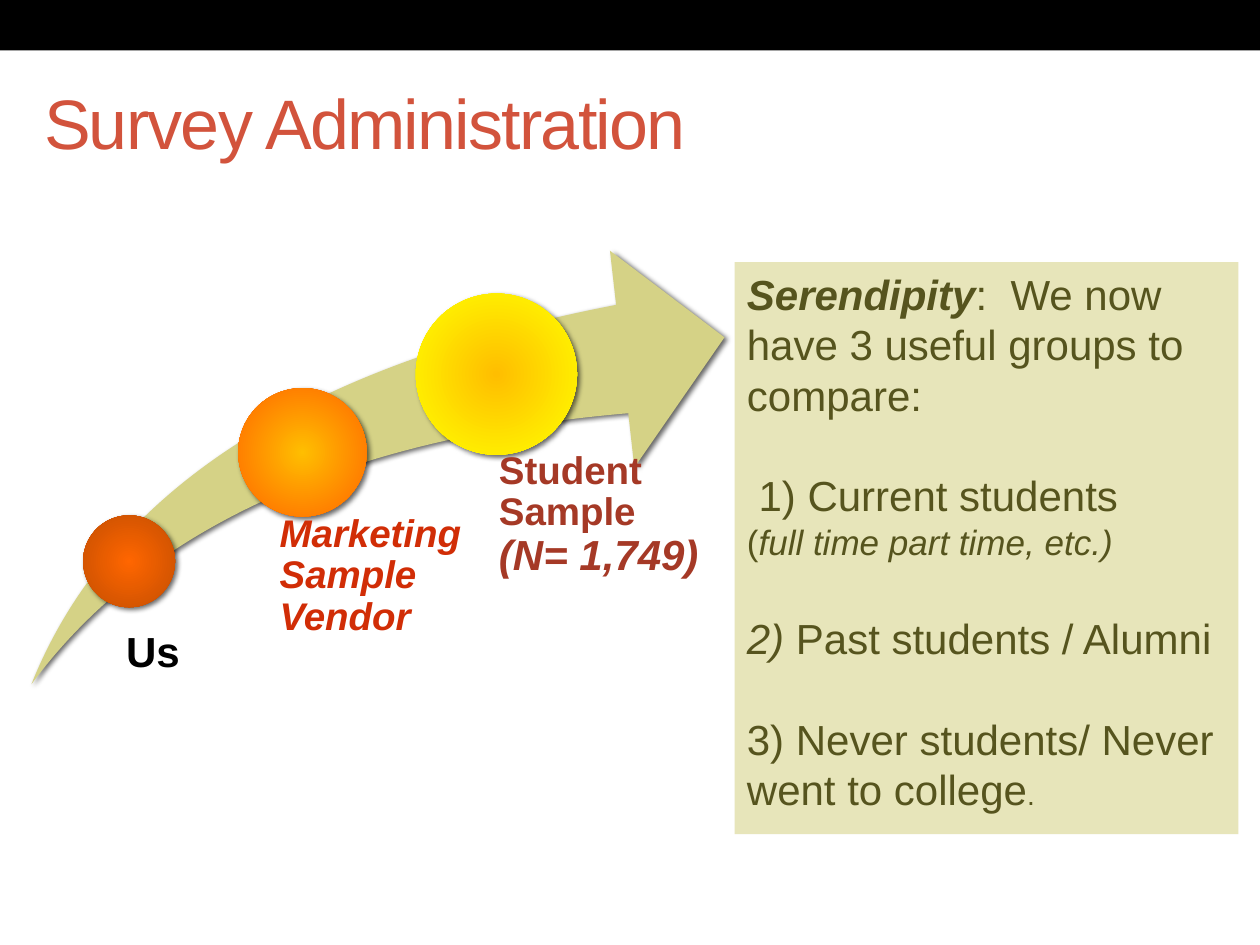
from lxml import etree
from pptx import Presentation
from pptx.dml.color import RGBColor
from pptx.enum.shapes import MSO_SHAPE as Shape
from pptx.enum.text import MSO_ANCHOR as Anchor, MSO_AUTO_SIZE as AutoSize, PP_ALIGN as Align
from pptx.oxml import parse_xml
from pptx.oxml.ns import nsdecls, qn
from pptx.util import Inches, Pt

COLORS = {
    "bar": "000000", "title": "D2533C", "arrow": "D5D286",
    "panel": "E7E5BA", "panel text": "56541E",
    "us": "000000", "vendor": "D12D06", "student": "A53926",
}
TITLE = "Survey Administration"
BOLD, ITALIC = {"bold": True}, {"italic": True}
BOLD_ITALIC = BOLD | ITALIC

# Each stage: circle (left, top, diameter), gradient (centre, edge),
# label (left, top, width, height), label inset, colour, lines of (text, size, format)
STAGES = [
    ((0.66, 4.09, 0.73), ("FF6600", "C44E01"), (0.92, 5.01, 0.89, 0.99), 0.08, "us",
     [("Us", 24, BOLD)]),
    ((1.89, 3.08, 1.02), ("FFBE00", "FF6600"), (2.08, 4.08, 2.07, 1.87), 0.14, "vendor",
     [("Marketing Sample Vendor", 22, BOLD_ITALIC)]),
    ((3.3, 2.33, 1.28), ("FFBE00", "FFFF00"), (3.77, 3.58, 1.98, 2.39), 0.19, "student",
     [("Student Sample", 22, BOLD), ("(N= 1,749)", 24, BOLD_ITALIC)]),
]

# Each paragraph: gap above in points, spans of (text, size, format)
GAP = 28.8
FINDINGS = [
    (0, [("Serendipity", 24, BOLD_ITALIC),
         (":  We now have 3 useful groups to compare:", 24, {})]),
    (GAP, [(" 1) Current students", 24, {})]),
    (0, [("(", 20, {}), ("full time part time, etc.)", 20, ITALIC)]),
    (GAP, [("2) ", 24, ITALIC), ("Past students / Alumni", 24, {})]),
    (GAP, [("3) Never students/ Never went to college", 24, {}), (".", 16, {})]),
]


def add_span(para, text, size, color, formats):
    span = para.add_run()
    span.text = text
    font = span.font
    font.name, font.size = "Arial", Pt(size)
    font.color.rgb = RGBColor.from_string(COLORS[color])
    for name, value in formats.items():
        setattr(font, name, value)
    return span


def set_frame(frame, **formats):
    for name, value in ({"word_wrap": True, "vertical_anchor": Anchor.TOP,
                         "auto_size": AutoSize.NONE} | formats).items():
        setattr(frame, name, value)


def add_solid(page, kind, place, color):
    shape = page.shapes.add_shape(kind, *map(Inches, place))
    shape.shadow.inherit = False
    shape.fill.solid()
    shape.fill.fore_color.rgb = RGBColor.from_string(COLORS[color])
    shape.line.fill.background()
    return shape


def add_shadow(shape):
    effects = shape.element.spPr.find(qn("a:effectLst"))
    effects.append(parse_xml(
        f'<a:outerShdw {nsdecls("a")} blurRad="{Pt(3)}" dist="{Pt(2)}" dir="2700000" '
        'rotWithShape="0"><a:srgbClr val="000000"><a:alpha val="60000"/></a:srgbClr>'
        '</a:outerShdw>'))


def set_radial_fill(shape, centre, edge):
    solid = shape.element.spPr.find(qn("a:solidFill"))
    radial = parse_xml(
        f'<a:gradFill {nsdecls("a")} rotWithShape="1"><a:gsLst>'
        f'<a:gs pos="0"><a:srgbClr val="{centre}"/></a:gs>'
        f'<a:gs pos="100000"><a:srgbClr val="{edge}"/></a:gs></a:gsLst>'
        '<a:path path="circle"/></a:gradFill>')
    etree.SubElement(radial.find(qn("a:path")), qn("a:fillToRect"),
                     {side: "50000" for side in "ltrb"})
    solid.getparent().replace(solid, radial)


def add_title(page):
    title = page.shapes.title
    title.left, title.top, title.width, title.height = map(Inches, (0.25, 0.58, 9, 1.08))
    set_frame(title.text_frame)
    para = title.text_frame.paragraphs[0]
    para.alignment = Align.LEFT
    span = add_span(para, TITLE, 40, "title", {})
    span.font._element.set("spc", "-100")


def add_stage(page, circle, gradient, place, inset, color, lines):
    left, top, diameter = circle
    marker = add_solid(page, Shape.OVAL, (left, top, diameter, diameter), "arrow")
    set_radial_fill(marker, *gradient)
    add_shadow(marker)
    frame = page.shapes.add_textbox(*map(Inches, place)).text_frame
    set_frame(frame, margin_left=Inches(inset), margin_top=0, margin_right=0, margin_bottom=0)
    para = frame.paragraphs[0]
    para.line_spacing = 0.9
    for number, (text, size, formats) in enumerate(lines):
        if number:
            para.add_line_break()
        add_span(para, text, size, color, formats)


def add_findings(page):
    frame = add_solid(page, Shape.RECTANGLE, (5.83, 2.08, 4, 4.54), "panel").text_frame
    set_frame(frame)
    for number, (gap, spans) in enumerate(FINDINGS):
        para = frame.add_paragraph() if number else frame.paragraphs[0]
        para.alignment, para.space_before = Align.LEFT, Pt(gap)
        for text, size, formats in spans:
            add_span(para, text, size, "panel text", formats)


def main():
    deck = Presentation()
    deck.slide_width, deck.slide_height = Inches(10), Inches(7.5)
    page = deck.slides.add_slide(deck.slide_layouts[5])
    add_solid(page, Shape.RECTANGLE, (0, 0, 10, 0.4), "bar")
    add_title(page)
    arrow = add_solid(page, Shape.SWOOSH_ARROW, (0.25, 1.99, 5.5, 3.44), "arrow")
    arrow.adjustments[0] = arrow.adjustments[1] = 0.25
    add_shadow(arrow)
    for stage in STAGES:
        add_stage(page, *stage)
    add_findings(page)
    deck.save("out.pptx")


if __name__ == "__main__":
    main()
